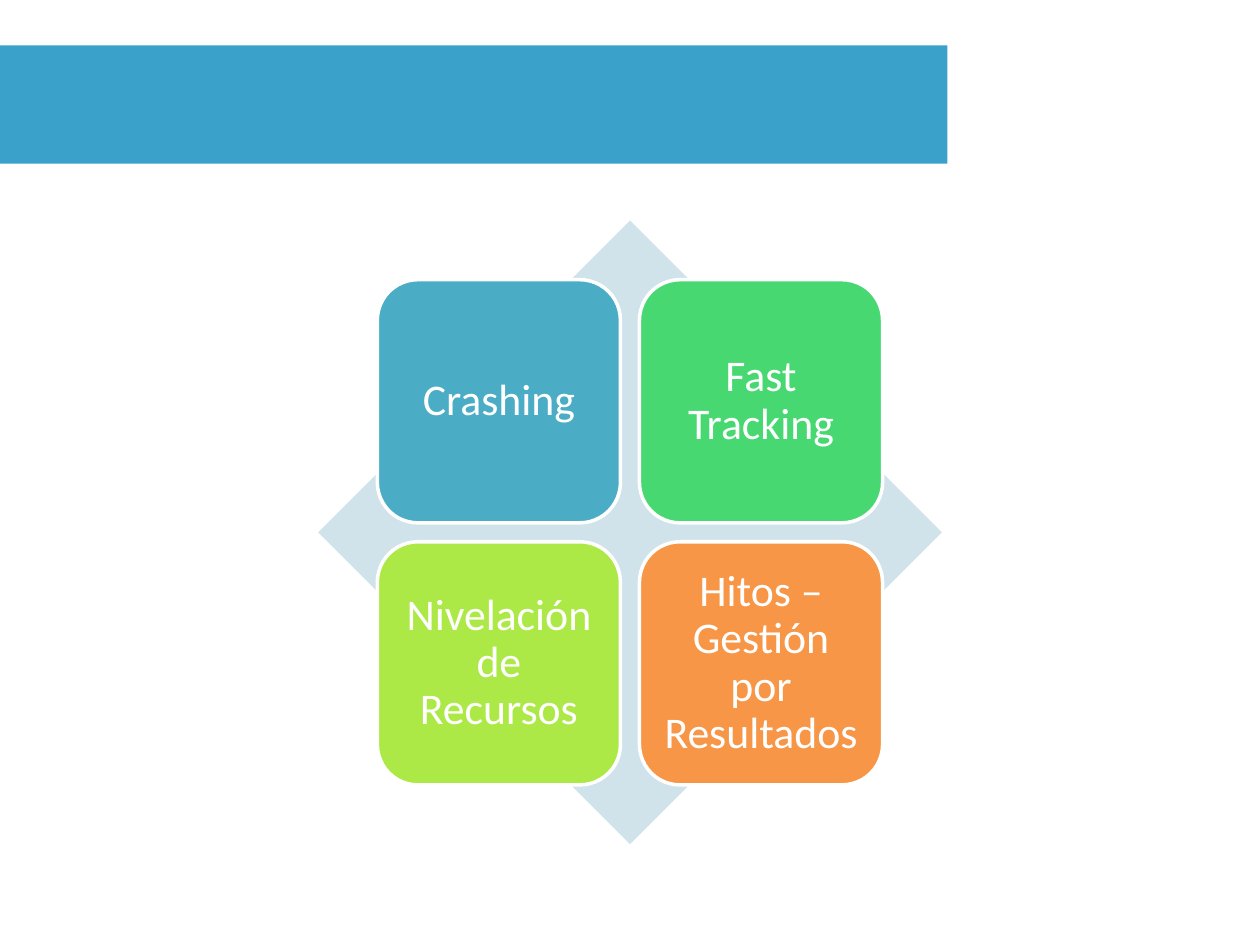
from dataclasses import dataclass

from pptx import Presentation
from pptx import util as u
from pptx.dml.color import RGBColor
from pptx.enum import shapes, text

WHITE = RGBColor(0xFF, 0xFF, 0xFF)
BANNER_BLUE = RGBColor(0x3A, 0xA1, 0xCA)
PALE_BLUE = RGBColor(0xD0, 0xE3, 0xEA)
TEAL = RGBColor(0x4B, 0xAC, 0xC6)
GREEN = RGBColor(0x47, 0xD8, 0x72)
LIME = RGBColor(0xAC, 0xE9, 0x46)
ORANGE = RGBColor(0xF7, 0x96, 0x46)

# Lengths in inches
SLIDE_WIDTH, SLIDE_HEIGHT = 10, 7.5
DIAMOND_SIZE = 4.95
DIAMOND_LEFT = (SLIDE_WIDTH - DIAMOND_SIZE) / 2
DIAMOND_TOP = 1.75
TILE_SIZE = 1.93
TILE_PITCH = 2.08
GRID_MARGIN = (DIAMOND_SIZE - TILE_PITCH - TILE_SIZE) / 2


@dataclass(frozen=True)
class Tile:
    label: str
    column: int
    row: int
    color: RGBColor


TILES = [
    Tile("Crashing", 0, 0, TEAL),
    Tile("Fast Tracking", 1, 0, GREEN),
    Tile("Nivelación de Recursos", 0, 1, LIME),
    Tile("Hitos – Gestión por Resultados", 1, 1, ORANGE),
]


def add_filled_shape(slide, kind, left: float, top: float, width: float,
                     height: float, color: RGBColor):
    shape = slide.shapes.add_shape(
        kind, u.Inches(left), u.Inches(top), u.Inches(width), u.Inches(height))
    shape.shadow.inherit = False
    shape.fill.solid()
    shape.fill.fore_color.rgb = color
    shape.line.fill.background()
    return shape


def add_tile(slide, tile: Tile) -> None:
    shape = add_filled_shape(
        slide, shapes.MSO_SHAPE.ROUNDED_RECTANGLE,
        DIAMOND_LEFT + GRID_MARGIN + tile.column * TILE_PITCH,
        DIAMOND_TOP + GRID_MARGIN + tile.row * TILE_PITCH,
        TILE_SIZE, TILE_SIZE, tile.color)
    shape.line.color.rgb = WHITE
    shape.line.width = u.Pt(2)

    frame = shape.text_frame
    frame.word_wrap = True
    frame.vertical_anchor = text.MSO_ANCHOR.MIDDLE
    frame.margin_left = frame.margin_right = u.Inches(0.1)
    frame.margin_top = frame.margin_bottom = u.Inches(0.1)

    paragraph = frame.paragraphs[0]
    paragraph.text = tile.label
    paragraph.alignment = text.PP_ALIGN.CENTER
    paragraph.line_spacing = 0.9
    paragraph.font.name = "Calibri"
    paragraph.font.size = u.Pt(25)
    paragraph.font.color.rgb = WHITE


def main() -> None:
    presentation = Presentation()
    presentation.slide_width = u.Inches(SLIDE_WIDTH)
    presentation.slide_height = u.Inches(SLIDE_HEIGHT)
    slide = presentation.slides.add_slide(presentation.slide_layouts[6])

    # Banner
    add_filled_shape(slide, shapes.MSO_SHAPE.RECTANGLE,
                     0, 0.36, 7.52, 0.94, BANNER_BLUE)

    # Matrix of techniques on a diamond
    add_filled_shape(slide, shapes.MSO_SHAPE.DIAMOND, DIAMOND_LEFT, DIAMOND_TOP,
                     DIAMOND_SIZE, DIAMOND_SIZE, PALE_BLUE)
    for tile in TILES:
        add_tile(slide, tile)

    presentation.save("out.pptx")


if __name__ == "__main__":
    main()
